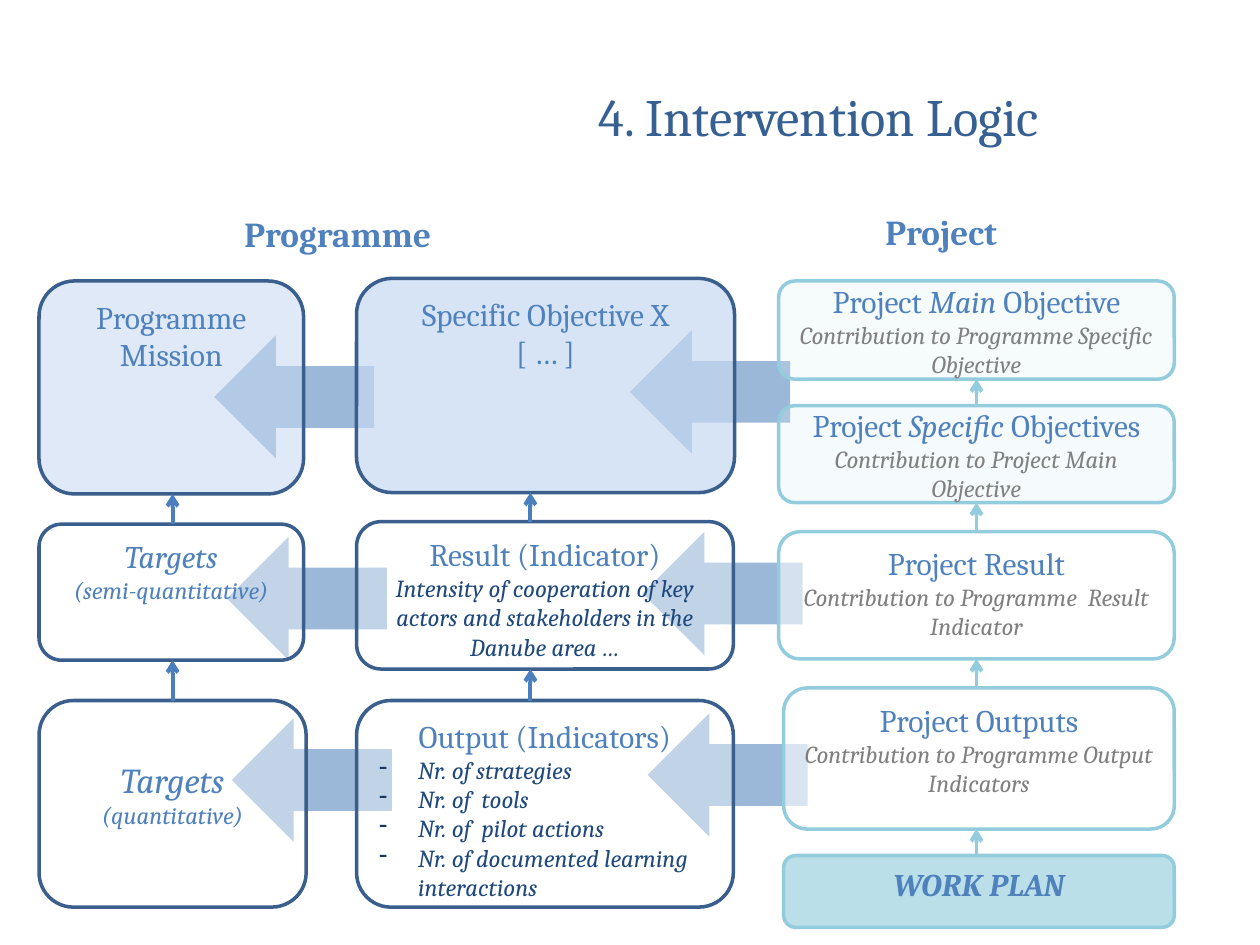
import pptx
import pptx.util
import pptx.dml.color
import pptx.enum.shapes
import pptx.enum.text
import pptx.oxml.ns
import lxml.etree

Inches = pptx.util.Inches
Pt = pptx.util.Pt
qn = pptx.oxml.ns.qn
ALIGN = pptx.enum.text.PP_ALIGN
ANCHOR = pptx.enum.text.MSO_ANCHOR
SHAPES = pptx.enum.shapes.MSO_SHAPE

THEME = {
    "font": "Cambria",
    "dark": "3A5F8C", "teal": "93CDDD", "arrow": "4F81BD", "link": "4B7EBC",
    "bullet": "17375E", "outline": 2, "connector": 2.25, "block_alpha": 56,
    "styles": {
        "title": (30, "376092", False, False),
        "header": (20, "4F81BD", True, False),
        "name": (18, "4F81BD", False, False),
        "emphasis": (18, "4F81BD", False, True),
        "large": (20, "4F81BD", False, True),
        "small": (14, "4F81BD", False, True),
        "detail": (14, "1F497D", False, True),
        "note": (14, "808080", False, True),
        "plan": (18, "4F81BD", True, True),
    },
}

TITLE = ("4. Intervention Logic", (3.76, 0.6, 5.48, 0.63))
HEADERS = [("Programme", (1.54, 1.64, 2.28, 0.44)), ("Project", (5.77, 1.62, 3.4, 0.44))]

COLUMNS = {
    "mission": {"line": "dark", "link": "link", "center": 1.37, "boxes": [
        {"at": (0.31, 2.23, 2.1, 1.69), "fill": ("C6D9F1", 56),
         "text": [[("name", "Programme Mission")]]},
        {"at": (0.31, 4.16, 2.1, 1.08), "fill": ("FFFFFF", 40),
         "text": [[("emphasis", "Targets")], [("small", "(semi-quantitative)")]]},
        {"at": (0.31, 5.56, 2.12, 1.64), "fill": ("FFFFFF", 39), "top_inset": 0.38,
         "text": [[("large", "Targets")], [("small", "(quantitative)")]]},
    ]},
    "objective": {"line": "dark", "link": "link", "center": 4.21, "boxes": [
        {"at": (2.83, 2.21, 3, 1.7), "fill": ("C6D9F1", 69),
         "text": [[("name", "Specific Objective X")], [("name", "[ … ]")]]},
        {"at": (2.83, 4.14, 2.99, 1.17), "fill": ("FFFFFF", 38),
         "text": [[("name", "Result (Indicator)")],
                  [("detail", "Intensity of cooperation of key actors and "
                              "stakeholders in the Danube area …")]]},
        {"at": (2.83, 5.56, 2.99, 1.64), "fill": ("FFFFFF", 38),
         "text": [[("name", "Output (Indicators)")]],
         "bullets": ["Nr. of strategies", "Nr. of  tools", "Nr. of  pilot actions",
                     "Nr. of documented learning interactions"]},
    ]},
    "project": {"line": "teal", "link": "teal", "center": 7.75, "boxes": [
        {"at": (6.18, 2.23, 3.14, 0.78), "fill": ("DBEEF4", 23), "middle": True,
         "text": [[("name", "Project "), ("emphasis", "Main"), ("name", " Objective")],
                  [("note", "Contribution to Programme Specific Objective")]]},
        {"at": (6.18, 3.22, 3.14, 0.77), "fill": ("DBEEF4", 27), "middle": True,
         "text": [[("name", "Project "), ("emphasis", "Specific"), ("name", " Objectives")],
                  [("note", "Contribution to Project Main Objective")]]},
        {"at": (6.18, 4.22, 3.14, 1.01), "fill": ("FFFFFF", 59),
         "text": [[("name", "Project Result")],
                  [("note", "Contribution to Programme  Result Indicator")]]},
        {"at": (6.22, 5.46, 3.1, 1.12), "fill": ("FFFFFF", 63),
         "text": [[("name", "Project Outputs")],
                  [("note", "Contribution to Programme Output Indicators")]]},
        {"at": (6.22, 6.79, 3.1, 0.57), "fill": ("93CDDD", 63),
         "text": [[("plan", "WORK PLAN")]]},
    ]},
}

BLOCK_SIZE = (1.27, 0.98)
BLOCK_COLUMNS = [(1.7, 0), (5, -0.04)]
BLOCK_ROWS = [(0, 2.66), (0.1, 4.26), (0.14, 5.7)]


def color(value):
    return pptx.dml.color.RGBColor.from_string(value)


def place(at):
    return [Inches(value) for value in at]


def style_run(run, style):
    size, run_color, bold, italic = THEME["styles"][style]
    run.font.name = THEME["font"]
    run.font.size = Pt(size)
    run.font.color.rgb = color(run_color)
    run.font.bold = bold
    run.font.italic = italic


def write(text_frame, paragraphs, alignment=ALIGN.CENTER):
    text_frame.word_wrap = True
    for index, runs in enumerate(paragraphs):
        paragraph = text_frame.paragraphs[0] if index == 0 else text_frame.add_paragraph()
        paragraph.alignment = alignment
        for style, text in runs:
            run = paragraph.add_run()
            run.text = text
            style_run(run, style)


def add_bullets(text_frame, items):
    for item in items:
        paragraph = text_frame.add_paragraph()
        paragraph.alignment = ALIGN.LEFT
        properties = paragraph._p.get_or_add_pPr()
        properties.set("marL", str(Inches(0.31)))
        properties.set("indent", str(-Inches(0.31)))
        bullet_color = lxml.etree.SubElement(properties, qn("a:buClr"))
        lxml.etree.SubElement(bullet_color, qn("a:srgbClr"), val=THEME["bullet"])
        lxml.etree.SubElement(properties, qn("a:buChar"), char="-")
        run = paragraph.add_run()
        run.text = item
        style_run(run, "detail")


def fill_shape(shape, fill_color, alpha):
    shape.shadow.inherit = False
    shape.fill.solid()
    shape.fill.fore_color.rgb = color(fill_color)
    element = shape._element.spPr.find(qn("a:solidFill")).find(qn("a:srgbClr"))
    lxml.etree.SubElement(element, qn("a:alpha"), val=str(alpha * 1000))


def add_block_arrow(slide, left, top):
    shape = slide.shapes.add_shape(SHAPES.RIGHT_ARROW, *place((left, top, *BLOCK_SIZE)))
    shape.rotation = 180
    fill_shape(shape, THEME["arrow"], THEME["block_alpha"])
    shape.line.fill.background()


def add_box(slide, box, line_color):
    shape = slide.shapes.add_shape(SHAPES.ROUNDED_RECTANGLE, *place(box["at"]))
    fill_shape(shape, *box["fill"])
    shape.line.color.rgb = color(line_color)
    shape.line.width = Pt(THEME["outline"])
    frame = shape.text_frame
    frame.vertical_anchor = ANCHOR.MIDDLE if box.get("middle") else ANCHOR.TOP
    frame.margin_top = Inches(box.get("top_inset", 0.05))
    write(frame, box["text"])
    add_bullets(frame, box.get("bullets", []))


def add_link(slide, center, lower, upper, line_color):
    start = lower["at"][1]
    end = upper["at"][1] + upper["at"][3]
    connector = slide.shapes.add_connector(
        pptx.enum.shapes.MSO_CONNECTOR.STRAIGHT, *place((center, start, center, end)))
    connector.line.color.rgb = color(line_color)
    connector.line.width = Pt(THEME["connector"])
    line = connector.line._get_or_add_ln()
    lxml.etree.SubElement(line, qn("a:tailEnd"), type="arrow")
    lxml.etree.SubElement(connector._element.spPr, qn("a:effectLst"))


def main():
    presentation = pptx.Presentation()
    presentation.slide_width = Inches(10)
    presentation.slide_height = Inches(7.5)
    slide = presentation.slides.add_slide(presentation.slide_layouts[5])

    title = slide.shapes.title
    title.left, title.top, title.width, title.height = place(TITLE[1])
    title.text_frame.vertical_anchor = ANCHOR.MIDDLE
    write(title.text_frame, [[("title", TITLE[0])]])

    for left, rise in BLOCK_COLUMNS:
        for shift, top in BLOCK_ROWS:
            add_block_arrow(slide, left + shift, top + rise)

    for text, at in HEADERS:
        write(slide.shapes.add_textbox(*place(at)).text_frame, [[("header", text)]])

    for column in COLUMNS.values():
        boxes = column["boxes"]
        for box in boxes:
            add_box(slide, box, THEME[column["line"]])
        for upper, lower in zip(boxes, boxes[1:]):
            add_link(slide, column["center"], lower, upper, THEME[column["link"]])

    presentation.save("out.pptx")


if __name__ == "__main__":
    main()
